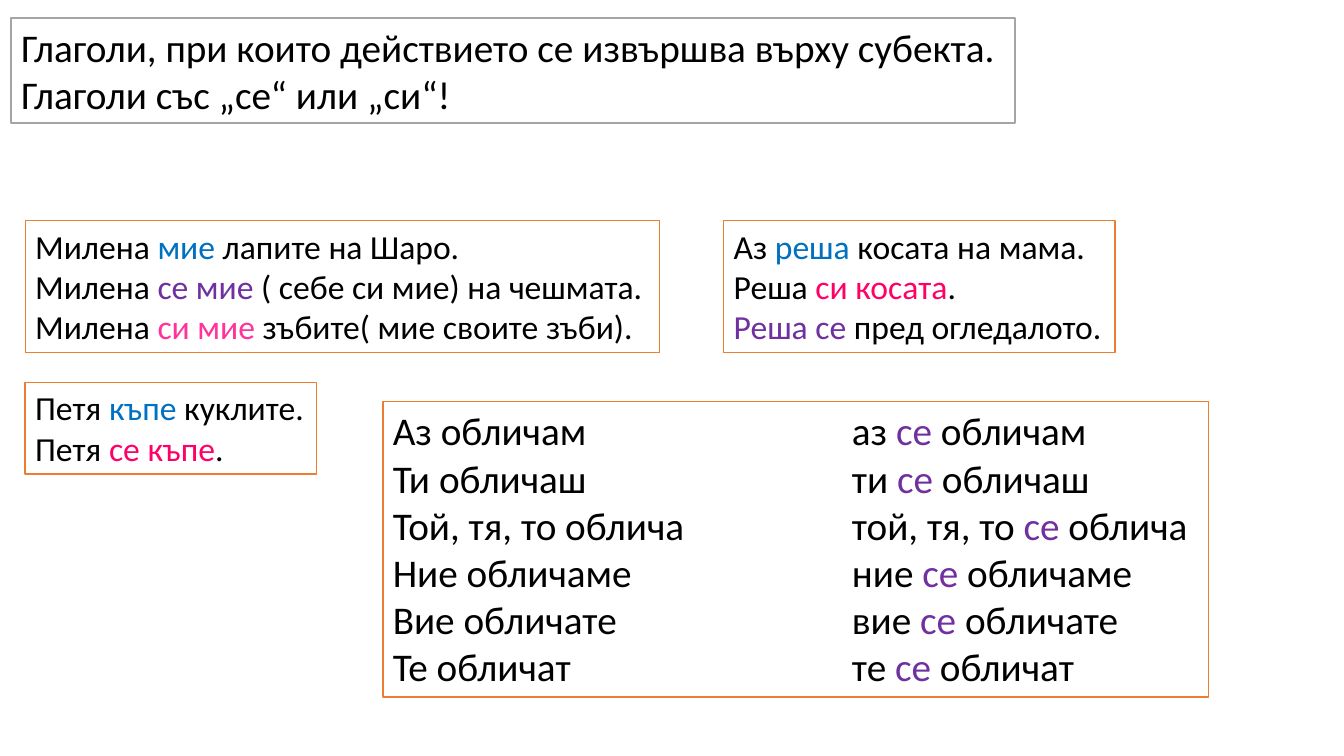
"""Build a slide about Bulgarian reflexive verbs."""
import pptx
import pptx.dml.color
import pptx.enum.shapes
import pptx.enum.text
import pptx.oxml.ns
import pptx.util
from lxml import etree

Pt = pptx.util.Pt
RGB = pptx.dml.color.RGBColor
BLACK = RGB(0x00, 0x00, 0x00)
WHITE = RGB(0xFF, 0xFF, 0xFF)
GRAY = RGB(0xA5, 0xA5, 0xA5)
ORANGE = RGB(0xED, 0x7D, 0x31)
BLUE = RGB(0x00, 0x70, 0xC0)
PURPLE = RGB(0x70, 0x30, 0xA0)
PINK = RGB(0xFF, 0x33, 0x99)
ROSE = RGB(0xFF, 0x00, 0x66)

TITLE = [
    [("Глаголи, при които действието се извършва върху субекта.", BLACK)],
    [("Глаголи със „се“ или „си“!", BLACK)],
]
WASH = [
    [("Милена ", BLACK), ("мие", BLUE), (" лапите на Шаро.", BLACK)],
    [("Милена ", BLACK), ("се мие ", PURPLE), ("( себе си мие) на чешмата.", BLACK)],
    [("Милена ", BLACK), ("си мие ", PINK), ("зъбите( мие своите зъби).", BLACK)],
]
BATHE = [
    [("Петя ", BLACK), ("къпе", BLUE), (" куклите.", BLACK)],
    [("Петя ", BLACK), ("се къпе", ROSE), (".", BLACK)],
]
COMB = [
    [("Аз ", BLACK), ("реша", BLUE), (" косата на мама.", BLACK)],
    [("Реша ", BLACK), ("си косата", ROSE), (".", BLACK)],
    [("Реша се ", PURPLE), ("пред огледалото.", BLACK)],
]
FORMS = [
    ("Аз", "обличам"),
    ("Ти", "обличаш"),
    ("Той, тя, то", "облича"),
    ("Ние", "обличаме"),
    ("Вие", "обличате"),
    ("Те", "обличат"),
]


def assign(item, values):
    """Set each attribute of item from a dict."""
    for name, value in values.items():
        setattr(item, name, value)


def add_tab(para, place):
    """Give a paragraph one left tab stop."""
    qn = pptx.oxml.ns.qn
    tabs = etree.SubElement(para._p.get_or_add_pPr(), qn("a:tabLst"))
    etree.SubElement(tabs, qn("a:tab"), pos=str(int(place)), algn="l")


def add_box(slide, place, lines, size, edge=ORANGE, tab=None):
    """Draw a framed box with lines of coloured runs."""
    kind = pptx.enum.shapes.MSO_SHAPE.RECTANGLE
    box = slide.shapes.add_shape(kind, *map(Pt, place))
    box.shadow.inherit = False
    box.fill.solid()
    box.fill.fore_color.rgb = WHITE
    box.line.color.rgb = edge
    box.line.width = Pt(1)
    frame = box.text_frame
    assign(frame, {
        "word_wrap": True,
        "vertical_anchor": pptx.enum.text.MSO_ANCHOR.TOP,
    })
    for index, line in enumerate(lines):
        para = frame.add_paragraph() if index else frame.paragraphs[0]
        para.alignment = pptx.enum.text.PP_ALIGN.LEFT
        if tab:
            add_tab(para, Pt(tab))
        for text, color in line:
            run = para.add_run()
            run.text = text
            assign(run.font, {"name": "Calibri", "size": Pt(size)})
            run.font.color.rgb = color


def pair(who, verb):
    """Return a plain form and its reflexive form as runs."""
    return [
        (f"{who} {verb}\t{who.lower()} ", BLACK),
        ("се", PURPLE),
        (f" {verb}", BLACK),
    ]


def main():
    """Build and save the slide."""
    deck = pptx.Presentation()
    assign(deck, {"slide_width": Pt(960), "slide_height": Pt(540)})
    slide = deck.slides.add_slide(deck.slide_layouts[6])
    add_box(slide, (8, 13, 717, 75), TITLE, 28, edge=GRAY)
    add_box(slide, (18, 157.5, 453, 94.5), WASH, 24)
    add_box(slide, (18, 273, 208, 65.5), BATHE, 24)
    add_box(slide, (517, 157.5, 279.5, 94.5), COMB, 24)
    forms = [pair(*form) for form in FORMS]
    add_box(slide, (273.5, 287, 590, 211), forms, 28, tab=328)
    deck.save("out.pptx")


if __name__ == "__main__":
    main()
